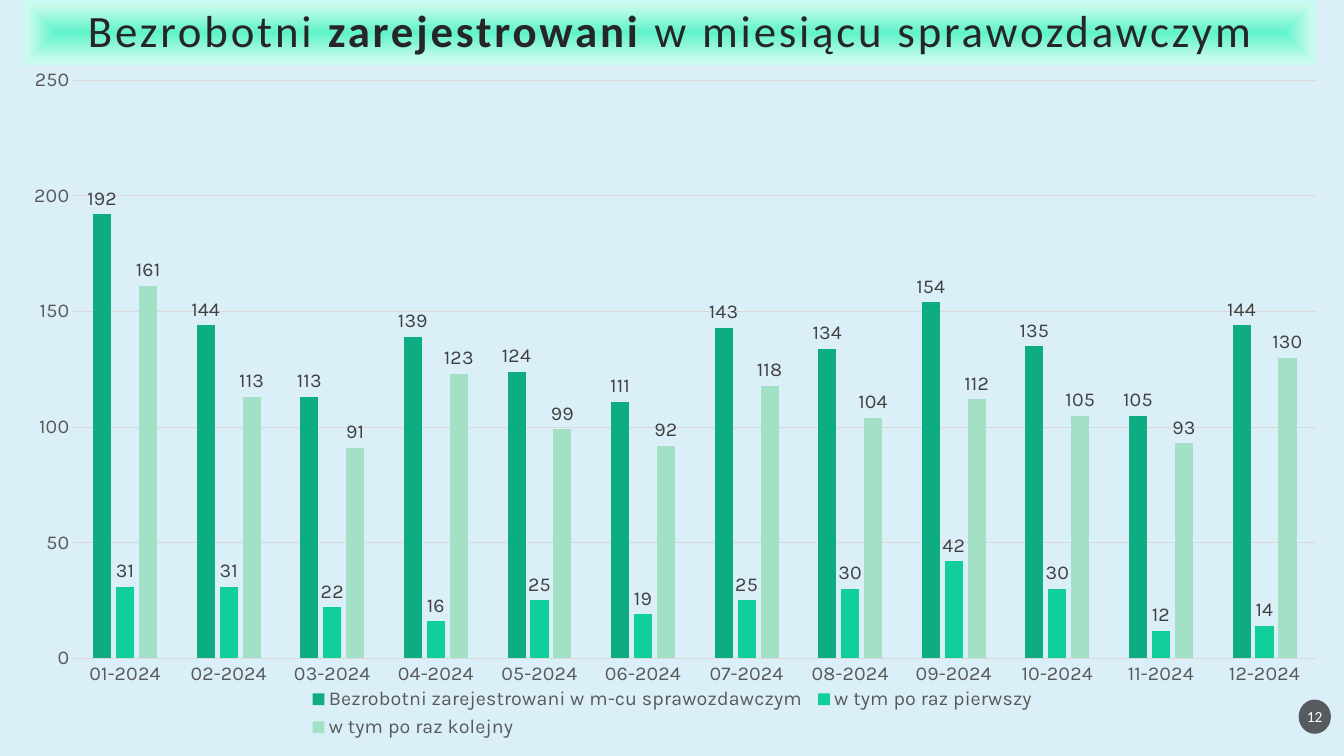
"""Build the slide on unemployed people registered per month in 2024."""
import pptx
import pptx.chart.data
import pptx.dml.color
import pptx.enum.chart
import pptx.enum.shapes
import pptx.enum.text
import pptx.oxml
import pptx.oxml.ns
import pptx.util
from pptx.util import Inches

COLORS = {
    "background": "DBEFF9", "title": "262626", "badge": "1D1D1D", "white": "FFFFFF",
    "axis": "595959", "grid": "D9D9D9", "label": "404040",
    "all": "0DAC81", "first": "10CF9B", "again": "A2E1C6",
}
TITLE_STOPS = [(0, "5FF3CA"), (84, "CAFBED"), (88, "CAFBED"), (100, "C9FAFC")]
SERIES = [
    ("Bezrobotni zarejestrowani w m-cu sprawozdawczym", "all",
     [192, 144, 113, 139, 124, 111, 143, 134, 154, 135, 105, 144]),
    ("w tym po raz pierwszy", "first",
     [31, 31, 22, 16, 25, 19, 25, 30, 42, 30, 12, 14]),
    ("w tym po raz kolejny", "again",
     [161, 113, 91, 123, 99, 92, 118, 104, 112, 105, 93, 130]),
]


def set_font(font, name, size, color):
    font.name = name
    font.size = pptx.util.Pt(size)
    font.color.rgb = pptx.dml.color.RGBColor.from_string(COLORS[color])


def manual_layout(x, y, w, h, inner=False):
    target = '<c:layoutTarget val="inner"/>' if inner else ""
    return pptx.oxml.parse_xml(
        f'<c:layout {pptx.oxml.ns.nsdecls("c")}><c:manualLayout>{target}'
        '<c:xMode val="edge"/><c:yMode val="edge"/>'
        f'<c:x val="{x}"/><c:y val="{y}"/><c:w val="{w}"/><c:h val="{h}"/>'
        '</c:manualLayout></c:layout>')


prs = pptx.Presentation()
prs.slide_width, prs.slide_height = Inches(13.33), Inches(7.5)
s = prs.slides.add_slide(prs.slide_layouts[5])
s.background.fill.solid()
s.background.fill.fore_color.rgb = pptx.dml.color.RGBColor.from_string(COLORS["background"])

title = s.shapes.title
title.left, title.top, title.width, title.height = Inches(0.23), 0, Inches(12.83), Inches(0.65)
stops = "".join(f'<a:gs pos="{pos * 1000}"><a:srgbClr val="{color}"/></a:gs>'
                for pos, color in TITLE_STOPS)
title.fill.background()
no_fill = title.element.spPr.find(pptx.oxml.ns.qn("a:noFill"))
title.element.spPr.replace(no_fill, pptx.oxml.parse_xml(
    f'<a:gradFill {pptx.oxml.ns.nsdecls("a")}><a:gsLst>{stops}</a:gsLst><a:path path="shape">'
    '<a:fillToRect l="50000" t="50000" r="50000" b="50000"/></a:path></a:gradFill>'))
tf = title.text_frame
tf.word_wrap = True
tf.auto_size = pptx.enum.text.MSO_AUTO_SIZE.NONE
tf.vertical_anchor = pptx.enum.text.MSO_ANCHOR.MIDDLE
tf.margin_left = tf.margin_right = tf.margin_top = tf.margin_bottom = Inches(0.2)
p = tf.paragraphs[0]
p.alignment = pptx.enum.text.PP_ALIGN.CENTER
p.line_spacing = 0.9
for text, bold in [("Bezrobotni ", False), ("zarejestrowani", True),
                   (" w miesiącu sprawozdawczym", False)]:
    r = p.add_run()
    r.text = text
    set_font(r.font, "Calibri", 32, "title")
    r.font.bold = bold
    r.font._element.set("spc", "200")

badge = s.shapes.add_shape(pptx.enum.shapes.MSO_SHAPE.OVAL,
                           Inches(12.88), Inches(6.94), Inches(0.32), Inches(0.34))
badge.shadow.inherit = False
badge.line.fill.background()
badge.fill.solid()
badge.fill.fore_color.rgb = pptx.dml.color.RGBColor.from_string(COLORS["badge"])
badge_color = badge.element.spPr.find(".//" + pptx.oxml.ns.qn("a:srgbClr"))
badge_color.append(pptx.oxml.parse_xml(
    f'<a:alpha {pptx.oxml.ns.nsdecls("a")} val="70000"/>'))
tf = badge.text_frame
tf.margin_left = tf.margin_right = Inches(0.02)
tf.vertical_anchor = pptx.enum.text.MSO_ANCHOR.MIDDLE
tf.text = "12"
p = tf.paragraphs[0]
p.alignment = pptx.enum.text.PP_ALIGN.CENTER
set_font(p.runs[0].font, "Calibri", 11, "white")

data = pptx.chart.data.CategoryChartData()
data.categories = [f"{month:02d}-2024" for month in range(1, 13)]
for name, color, values in SERIES:
    data.add_series(name, values)
chart = s.shapes.add_chart(pptx.enum.chart.XL_CHART_TYPE.COLUMN_CLUSTERED, Inches(0.14),
                           Inches(0.65), Inches(13.06), Inches(6.73), data).chart
set_font(chart.font, "Karla", 14, "axis")
chart.has_title = False
chart.has_legend = True
legend = chart.legend
legend.position = pptx.enum.chart.XL_LEGEND_POSITION.BOTTOM
legend.include_in_layout = False
set_font(legend.font, "Karla", 14, "axis")
legend._element.find(pptx.oxml.ns.qn("c:legendPos")).addnext(
    manual_layout(0.22, 0.91, 0.56, 0.09))

plot_area = chart._chartSpace.chart.plotArea
for layout in plot_area.findall(pptx.oxml.ns.qn("c:layout")):
    plot_area.remove(layout)
plot_area.insert(0, manual_layout(0.045, 0.022, 0.944, 0.852, inner=True))

values_axis, months_axis = chart.value_axis, chart.category_axis
for axis in (values_axis, months_axis):
    axis.major_tick_mark = axis.minor_tick_mark = pptx.enum.chart.XL_TICK_MARK.NONE
    set_font(axis.tick_labels.font, "Karla", 14, "axis")
values_axis.minimum_scale, values_axis.maximum_scale, values_axis.major_unit = 0, 250, 50
values_axis.format.line.fill.background()
for line in (values_axis.major_gridlines.format.line, months_axis.format.line):
    line.width = pptx.util.Pt(0.75)
    line.color.rgb = pptx.dml.color.RGBColor.from_string(COLORS["grid"])

plot = chart.plots[0]
plot.vary_by_categories = False
plot.gap_width, plot.overlap = 219, -27
for series, (name, color, values) in zip(plot.series, SERIES):
    series.format.fill.solid()
    series.format.fill.fore_color.rgb = pptx.dml.color.RGBColor.from_string(COLORS[color])
    labels = series.data_labels
    labels.show_value = True
    labels.position = pptx.enum.chart.XL_LABEL_POSITION.OUTSIDE_END
    set_font(labels.font, "Karla", 14, "label")

prs.save("out.pptx")
